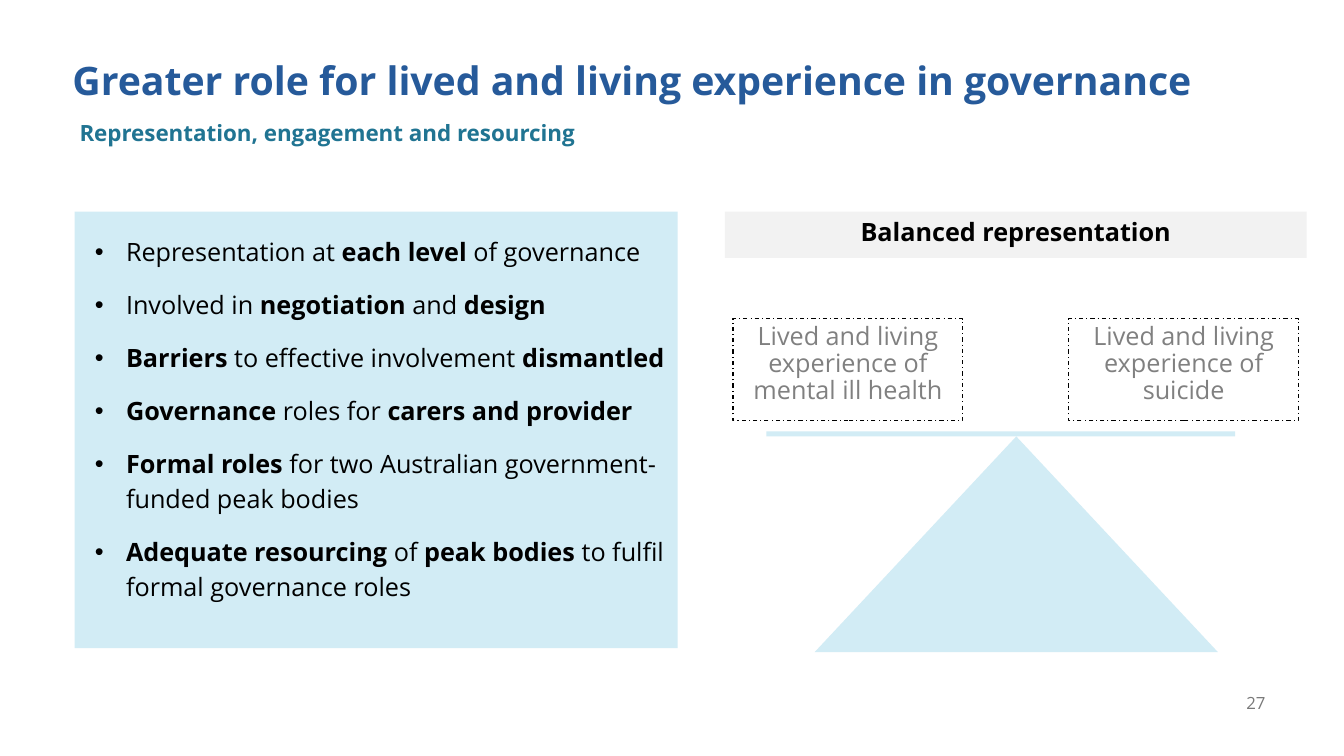
from lxml import etree
from pptx import Presentation
from pptx.dml.color import RGBColor
from pptx.enum.dml import MSO_LINE
from pptx.enum.shapes import MSO_SHAPE as SHAPE
from pptx.enum.text import MSO_ANCHOR as ANCHOR, PP_ALIGN as ALIGN
from pptx.oxml.ns import qn
from pptx.util import Inches, Pt

# Content: ** marks the start and end of bold words
TITLE = "Greater role for lived and living experience in governance"
SUBTITLE = "Representation, engagement and resourcing"
BULLETS = [
    "Representation at **each level **of governance",
    "Involved in **negotiation** and **design**",
    "**Barriers** to effective involvement **dismantled**",
    "**Governance** roles for **carers and provider**",
    "**Formal roles **for two Australian government-funded peak bodies",
    "**Adequate resourcing **of **peak bodies **to fulfil formal governance roles",
]
HEADING = "Balanced representation"
SIDES = ["Lived and living experience of mental ill health",
         "Lived and living experience of suicide"]
PAGE = "27"

# Style
FONT = "Open Sans"
BLUE = RGBColor(0x26, 0x5A, 0x9A)
TEAL = RGBColor(0x20, 0x74, 0x92)
PALE = RGBColor(0xD2, 0xEC, 0xF5)
PALE_GREY = RGBColor(0xF2, 0xF2, 0xF2)
GREY = RGBColor(0x80, 0x80, 0x80)
PAGE_GREY = RGBColor(0x79, 0x79, 0x79)
BLACK = RGBColor(0, 0, 0)
WHITE = RGBColor(255, 255, 255)

prs = Presentation()
prs.slide_width, prs.slide_height = Inches(13.33), Inches(7.5)
s = prs.slides.add_slide(prs.slide_layouts[6])


def set_font(font, size, color, bold=False):
    font.name, font.size, font.bold = FONT, Pt(size), bold
    font.color.rgb = color


def write(sp, text, size, color, bold=False, align=ALIGN.LEFT, anchor=ANCHOR.TOP):
    tf = sp.text_frame
    tf.word_wrap, tf.vertical_anchor = True, anchor
    tf.text = text
    p = tf.paragraphs[0]
    p.alignment, p.line_spacing = align, 0.9
    set_font(p.runs[0].font, size, color, bold)
    return tf


def add_text(box, *args, **kwargs):
    return write(s.shapes.add_textbox(*map(Inches, box)), *args, **kwargs)


def add_block(kind, box, fill):
    sp = s.shapes.add_shape(kind, *map(Inches, box))
    sp.shadow.inherit = False
    sp.fill.solid()
    sp.fill.fore_color.rgb = fill
    sp.line.fill.background()
    return sp


def add_bullet(p, indent):
    pPr = p._p.get_or_add_pPr()
    pPr.set("marL", str(indent))
    pPr.set("indent", str(-indent))
    etree.SubElement(pPr, qn("a:buFont")).set("typeface", "Arial")
    etree.SubElement(pPr, qn("a:buChar")).set("char", "•")


# Title, subtitle and page number
add_text((0.62, 0.56, 12.12, 0.56), TITLE, 28, BLUE, bold=True)
add_text((0.69, 1.16, 12.12, 0.44), SUBTITLE, 16, TEAL, bold=True)
add_text((11.89, 6.78, 0.76, 0.4), PAGE, 12, PAGE_GREY,
         align=ALIGN.RIGHT, anchor=ANCHOR.MIDDLE)

# Bullet panel
panel = add_block(SHAPE.RECTANGLE, (0.74, 2.1, 5.98, 4.33), PALE)
tf = panel.text_frame
tf.word_wrap, tf.vertical_anchor = True, ANCHOR.TOP
tf.margin_left = tf.margin_top = Inches(0.2)
for i, bullet in enumerate(BULLETS):
    p = tf.paragraphs[0] if i == 0 else tf.add_paragraph()
    p.alignment, p.line_spacing, p.space_after = ALIGN.LEFT, Pt(24.9), Pt(13)
    add_bullet(p, Inches(0.31))
    for j, part in enumerate(bullet.split("**")):
        if part:
            r = p.add_run()
            r.text = part
            set_font(r.font, 18, BLACK, bold=j % 2 == 1)

# Heading over the scale
heading = add_block(SHAPE.RECTANGLE, (7.19, 2.1, 5.77, 0.46), PALE_GREY)
tf = write(heading, HEADING, 18, BLACK, bold=True, align=ALIGN.CENTER)
tf.margin_top = tf.margin_bottom = Inches(0.08)

# Scale: beam, pivot and the two sides
add_block(SHAPE.RECTANGLE, (7.6, 4.28, 4.65, 0.05), PALE)
add_block(SHAPE.ISOSCELES_TRIANGLE, (8.08, 4.33, 4, 2.14), PALE)
for i, side in enumerate(SIDES):
    sp = add_block(SHAPE.RECTANGLE, (7.27 + i * 3.33, 3.16, 2.28, 1.01), WHITE)
    sp.line.color.rgb = BLACK
    sp.line.width = Pt(0.75)
    sp.line.dash_style = MSO_LINE.DASH_DOT
    write(sp, side, 18, GREY, align=ALIGN.CENTER)

prs.save("out.pptx")
